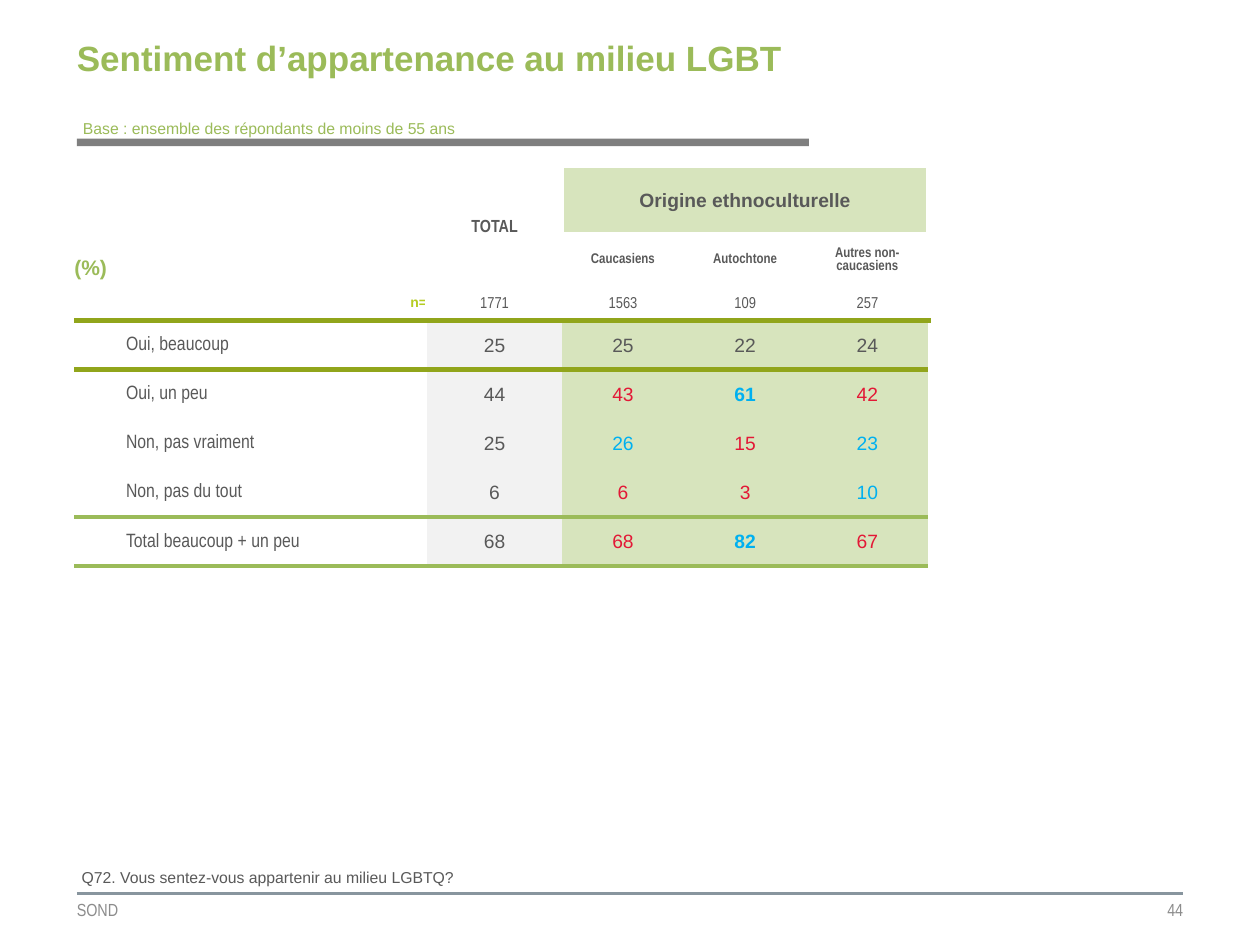
from dataclasses import dataclass
from lxml.etree import SubElement
from pptx import Presentation
from pptx.dml.color import RGBColor
from pptx.enum.shapes import MSO_CONNECTOR as Link, MSO_SHAPE as Shape
from pptx.enum.text import MSO_ANCHOR as Anchor, PP_ALIGN as Align
from pptx.oxml.ns import qn
from pptx.util import Inches, Pt


@dataclass(frozen=True)
class Theme:
    sans: str = "Arial"
    slim: str = "Arial Narrow"
    white: str = "FFFFFF"
    ink: str = "595959"
    grey: str = "8C8C8C"
    bar: str = "7F7F7F"
    rule: str = "88959E"
    green: str = "9BBB59"
    lime: str = "B5CC22"
    olive: str = "91A51B"
    pale: str = "D7E4BD"
    mist: str = "F2F2F2"
    red: str = "E31836"
    blue: str = "00B0F0"
    title: int = 20
    unit: int = 12
    body: int = 11
    foot: int = 10
    note: int = 9
    small: int = 8


look = Theme()


def write(frame, text, size, color, face=look.sans, bold=False, align=Align.LEFT):
    frame.text = text
    para = frame.paragraphs[0]
    para.alignment = align
    font = para.font
    font.name, font.size, font.bold = face, Pt(size), bold
    font.color.rgb = RGBColor.from_string(color)
    return para


def edge(cell, side, color, width):
    line = SubElement(cell._tc.get_or_add_tcPr(), qn(f"a:ln{side}"), w=str(Pt(width)))
    fill = SubElement(line, qn("a:solidFill"))
    SubElement(fill, qn("a:srgbClr"), val=color)


deck = Presentation()
deck.slide_width, deck.slide_height = Inches(10), Inches(7.5)
slide = deck.slides.add_slide(deck.slide_layouts[5])
shapes = slide.shapes

title = shapes.title
title.left, title.top = Inches(0.61), Inches(0.11)
title.width, title.height = Inches(7.46), Inches(0.69)
frame = title.text_frame
frame.margin_left = frame.margin_right = frame.margin_top = frame.margin_bottom = 0
frame.vertical_anchor = Anchor.MIDDLE
write(frame, "Sentiment d’appartenance au milieu LGBT", look.title, look.green, bold=True)

rule = shapes.add_connector(Link.STRAIGHT, Inches(0.61), Inches(7.09), Inches(9.39), Inches(7.09))
rule.line.color.rgb = RGBColor.from_string(look.rule)
rule.line.width = Pt(1.5)
SubElement(rule._element.spPr, qn("a:effectLst"))

bar = shapes.add_shape(Shape.RECTANGLE, Inches(0.61), Inches(1.1), Inches(5.81), Inches(0.06))
bar.shadow.inherit = False
bar.fill.solid()
bar.fill.fore_color.rgb = RGBColor.from_string(look.bar)
bar.line.fill.background()

for left, text, align in ((0.61, "SOND", Align.LEFT), (6.59, "44", Align.RIGHT)):
    frame = shapes.add_textbox(Inches(left), Inches(7.09), Inches(2.8), Inches(0.26)).text_frame
    frame.margin_left = frame.margin_right = frame.margin_top = frame.margin_bottom = 0
    frame.vertical_anchor = Anchor.MIDDLE
    frame.word_wrap = True
    write(frame, text, look.foot, look.grey, look.slim, align=align)

for left, top, width, text, color in (
    (0.55, 6.84, 8.55, "Q72. Vous sentez-vous appartenir au milieu LGBTQ?", look.ink),
    (0.56, 0.89, 4, "Base : ensemble des répondants de moins de 55 ans", look.green),
):
    frame = shapes.add_textbox(Inches(left), Inches(top), Inches(width), Inches(0.25)).text_frame
    frame.word_wrap = True
    write(frame, text, look.note, color)

wide = [2.8, 1.07, 0.97, 0.97, 0.97]
high = [0.32, 0.18, 0.43, 0.27] + [0.39] * 6
table = shapes.add_table(
    len(high), len(wide), Inches(0.59), Inches(1.33), Inches(sum(wide)), Inches(sum(high))
).table
table.first_row = table.horz_banding = False
table._tbl.tblPr.find(qn("a:tableStyleId")).text = "{2D5ABB26-0587-4C30-8999-92F81FD0307C}"
for col, size in zip(table.columns, wide):
    col.width = Inches(size)
for row, size in zip(table.rows, high):
    row.height = Inches(size)

table.cell(0, 1).merge(table.cell(2, 1))
table.cell(0, 2).merge(table.cell(1, 4))
table.cell(1, 0).merge(table.cell(2, 0))

fills = [None, look.mist] + [look.pale] * 3
for r in range(len(high)):
    for c in range(len(wide)):
        cell = table.cell(r, c)
        cell.vertical_anchor = Anchor.MIDDLE
        cell.margin_left = cell.margin_right = cell.margin_top = Inches(0.01)
        cell.margin_bottom = 0
        write(cell.text_frame, "", look.small, look.ink)
        if r < 4:
            if c:
                edge(cell, "L", look.white, 3)
            edge(cell, "R", look.white, 3)
        for above, color, width in ((3, look.olive, 3), (7, look.green, 2.25)):
            if r in (above, above + 1):
                edge(cell, "B" if r == above else "T", color, width)
        fill = look.white if r == 9 else fills[c] if r > 3 else None
        if (r, c) == (0, 2):
            fill = look.pale
        if fill:
            cell.fill.solid()
            cell.fill.fore_color.rgb = RGBColor.from_string(fill)
        else:
            cell.fill.background()

heads = [
    (0, 1, "TOTAL", look.foot, look.slim),
    (0, 2, "Origine ethnoculturelle", look.body, look.sans),
    (2, 2, "Caucasiens", look.small, look.slim),
    (2, 3, "Autochtone", look.small, look.slim),
    (2, 4, "Autres non-caucasiens", look.small, look.slim),
]
for r, c, text, size, face in heads:
    write(table.cell(r, c).text_frame, text, size, look.ink, face, True, Align.CENTER)

unit = table.cell(1, 0)
unit.vertical_anchor = Anchor.BOTTOM
count = table.cell(3, 0)
for cell in (unit, count):
    cell.margin_left = cell.margin_right = 0
    cell.margin_top = cell.margin_bottom = Inches(0.05)
write(unit.text_frame, "(%)", look.unit, look.green, bold=True).line_spacing = 0.95
write(count.text_frame, "n=", look.small, look.lime, bold=True, align=Align.RIGHT).line_spacing = 0.95
for c, text in enumerate(("1771", "1563", "109", "257"), 1):
    write(table.cell(3, c).text_frame, text, look.note, look.ink, look.slim, align=Align.CENTER)

tones = {"k": look.ink, "r": look.red, "b": look.blue, "B": look.blue}
data = [
    ("Oui, beaucoup", (25, 25, 22, 24), "kkkk"),
    ("Oui, un peu", (44, 43, 61, 42), "krBr"),
    ("Non, pas vraiment", (25, 26, 15, 23), "kbrb"),
    ("Non, pas du tout", (6, 6, 3, 10), "krrb"),
    ("Total beaucoup + un peu", (68, 68, 82, 67), "krBr"),
]
for r, (label, nums, marks) in enumerate(data, 4):
    para = write(table.cell(r, 0).text_frame, label, look.body, look.ink, look.slim)
    para._p.get_or_add_pPr().set("marL", str(Inches(0.4)))
    for c, (num, mark) in enumerate(zip(nums, marks), 1):
        frame = table.cell(r, c).text_frame
        write(frame, str(num), look.body, tones[mark], bold=mark == "B", align=Align.CENTER)

deck.save("out.pptx")
